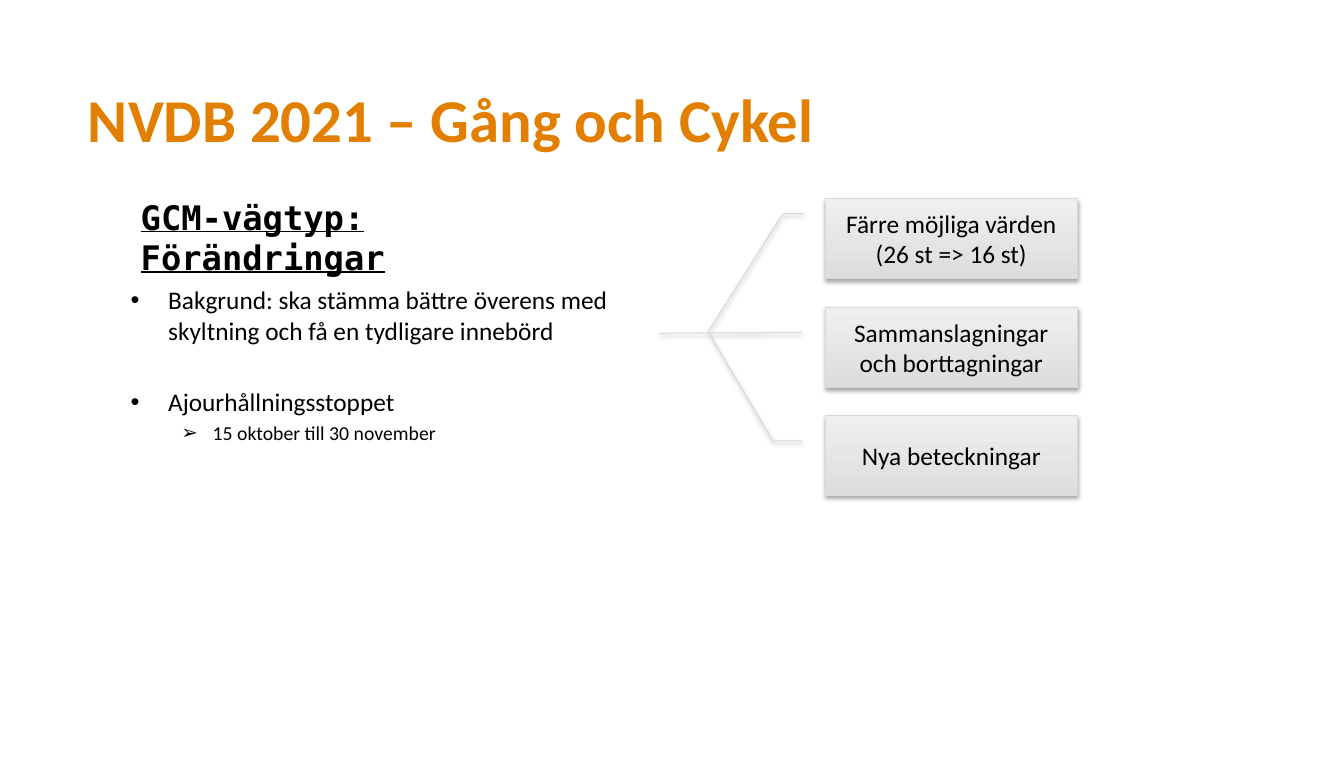
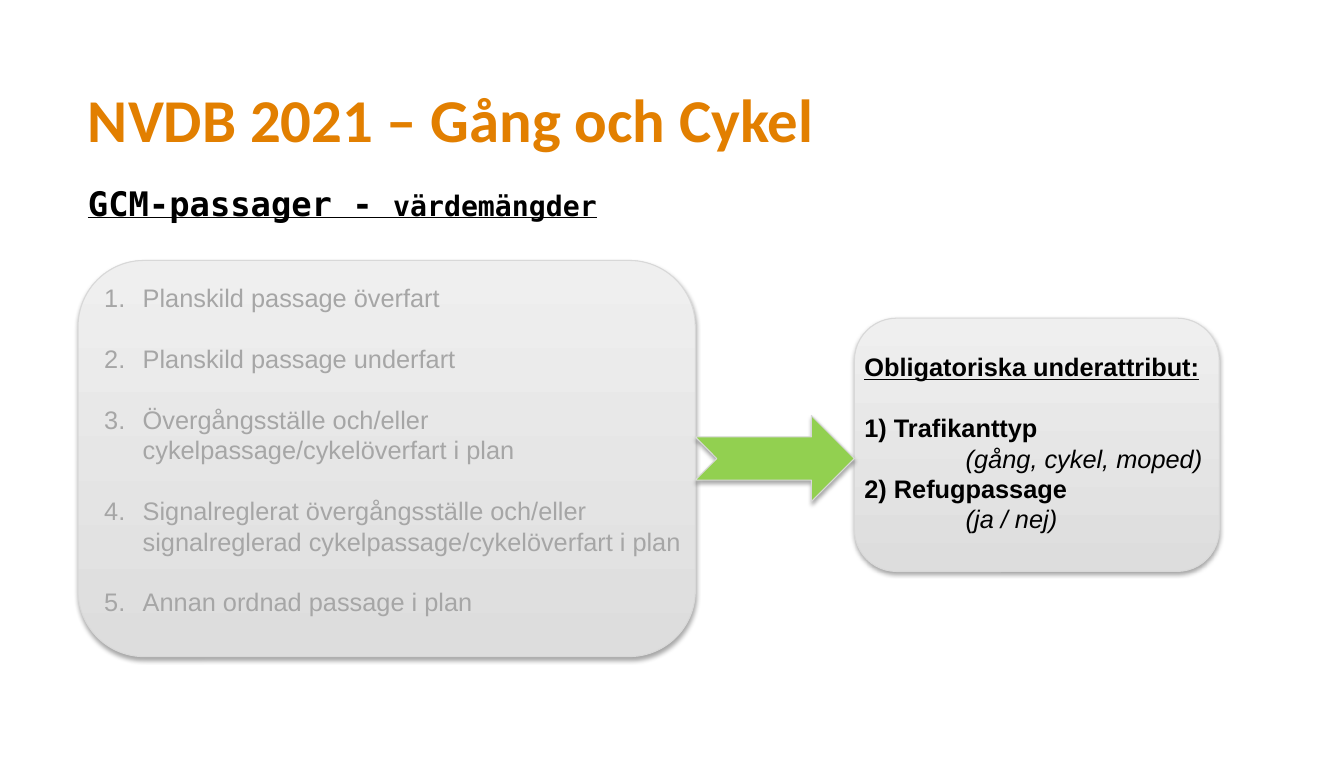
import pptx
import pptx.util
import pptx.dml.color
import pptx.enum.shapes
import pptx.enum.text
import pptx.oxml
import pptx.oxml.ns
from lxml import etree

PX = 9144  # 100 px to the inch
MSO_SHAPE = pptx.enum.shapes.MSO_SHAPE
ORANGE, BLACK, GREY = "E27F00", "000000", "A6A6A6"
EDGE, PALE, SHADE, GREEN = "D8D8D8", "EFEFEF", "DDDDDD", "92D050"
SANS, ARIAL, MONO = "Calibri", "Arial", "DejaVu Sans Mono"
ARIAL_LINE = 21.6  # line pitch in points for 18 pt Arial
MARGIN = 77


def emu(*lengths):
    return [length * PX for length in lengths]


def rgb(value):
    return pptx.dml.color.RGBColor.from_string(value)


def style_run(run, size, font, color, bold=False, italic=False, underline=False):
    run.font.size = pptx.util.Pt(size)
    run.font.name = font
    run.font.color.rgb = rgb(color)
    run.font.bold = bold
    run.font.italic = italic
    run.font.underline = underline


def set_indent(paragraph, left, hanging=0):
    properties = paragraph._p.get_or_add_pPr()
    properties.set("marL", str(left * PX))
    properties.set("indent", str(-hanging * PX))


def add_bullet(paragraph, tag, **attributes):
    properties = paragraph._p.get_or_add_pPr()
    font = etree.SubElement(properties, pptx.oxml.ns.qn("a:buFont"))
    font.set("typeface", ARIAL)
    bullet = etree.SubElement(properties, pptx.oxml.ns.qn(tag))
    for name, value in attributes.items():
        bullet.set(name, value)


def add_text_box(slide, left, top, width, height):
    frame = slide.shapes.add_textbox(*emu(left, top, width, height)).text_frame
    frame.word_wrap = True
    return frame


def add_paragraph(frame, text, space_before=0, line=None):
    """Fill the first paragraph, then add further ones."""
    first = not frame.text
    paragraph = frame.paragraphs[0] if first else frame.add_paragraph()
    paragraph.text = text
    if not first:
        paragraph.space_before = pptx.util.Pt(space_before)
    if line:
        paragraph.line_spacing = pptx.util.Pt(line)
    return paragraph


def add_title(slide):
    frame = add_text_box(slide, MARGIN, 76, 1064, 67)
    title = add_paragraph(frame, "NVDB 2021 – Gång och Cykel")
    style_run(title.runs[0], 43.2, SANS, ORANGE, bold=True)


def add_heading(slide, left, top, width, parts):
    heading = add_text_box(slide, left, top, width, 50).paragraphs[0]
    for text, size in parts:
        run = heading.add_run()
        run.text = text
        style_run(run, size, MONO, BLACK, bold=True, underline=True)


def add_panel(slide, kind, left, top, width, height, solid=None):
    """Preset shape with thin edge, soft shadow and grey gradient or solid fill."""
    panel = slide.shapes.add_shape(kind, *emu(left, top, width, height))
    if solid:
        panel.fill.solid()
        panel.fill.fore_color.rgb = rgb(solid)
    else:
        panel.fill.gradient()
        panel.fill.gradient_angle = 90
        for stop, color in zip(panel.fill.gradient_stops, (SHADE, PALE)):
            stop.color.rgb = rgb(color)
    panel.line.color.rgb = rgb(EDGE)
    panel.line.width = pptx.util.Pt(0.75)
    panel.shadow.inherit = False
    effects = panel._element.spPr.find(pptx.oxml.ns.qn("a:effectLst"))
    effects.append(pptx.oxml.parse_xml(
        f'<a:outerShdw {pptx.oxml.ns.nsdecls("a")} blurRad="40000" dist="23000" '
        f'dir="5400000" rotWithShape="0"><a:srgbClr val="{BLACK}">'
        '<a:alpha val="35000"/></a:srgbClr></a:outerShdw>'))
    return panel


def add_callout(slide, top, text, leader):
    callout = add_panel(slide, MSO_SHAPE.LINE_CALLOUT_2, 814, top, 249, 79)
    for index, value in enumerate(leader):
        callout.adjustments[index] = value
    frame = callout.text_frame
    frame.word_wrap = True
    frame.vertical_anchor = pptx.enum.text.MSO_ANCHOR.MIDDLE
    label = add_paragraph(frame, text)
    label.alignment = pptx.enum.text.PP_ALIGN.CENTER
    style_run(label.runs[0], 18, SANS, BLACK)


def build_road_types(slide):
    add_title(slide)
    add_heading(slide, 129, 189, 496, [("GCM-vägtyp: Förändringar", 24)])

    # Background and freeze period
    points = add_text_box(slide, 119, 276, 549, 258)
    for text, level, size, mark, left, hanging, gap in (
        ("Bakgrund: ska stämma bättre överens med skyltning och få en tydligare innebörd",
         0, 18, "•", 37, 37, 0),
        ("Ajourhållningsstoppet", 0, 18, "•", 37, 37, 29),
        ("15 oktober till 30 november", 1, 14, "➢", 81, 31, 2.8),
    ):
        point = add_paragraph(points, text, gap)
        point.level = level
        set_indent(point, left, hanging)
        add_bullet(point, "a:buChar", char=mark)
        style_run(point.runs[0], size, SANS, BLACK)

    # Changes, with leader lines meeting at one point
    changes = (
        ("Färre möjliga värden (26 st => 16 st)", (0.188, -0.083, 0.188, -0.167, 1.661, -0.463)),
        ("Sammanslagningar och borttagningar", (0.318, -0.091, 0.318, -0.207, 0.328, -0.658)),
        ("Nya beteckningar", (0.318, -0.091, 0.318, -0.207, -1.005, -0.456)),
    )
    for row, (text, leader) in enumerate(changes):
        add_callout(slide, 196 + 107 * row, text, leader)


def build_passages(slide):
    add_title(slide)
    add_heading(slide, MARGIN, 175, 913, [("GCM-passager - ", 24), ("värdemängder", 20)])
    add_panel(slide, MSO_SHAPE.ROUNDED_RECTANGLE, 843, 314, 360, 250)
    add_panel(slide, MSO_SHAPE.ROUNDED_RECTANGLE, MARGIN, 257, 609, 391)
    add_panel(slide, MSO_SHAPE.NOTCHED_RIGHT_ARROW, 686, 410, 157, 85, GREEN)

    # Passage values
    passages = add_text_box(slide, 93, 274, 636, 374)
    for text in (
        "Planskild passage överfart",
        "Planskild passage underfart",
        "Övergångsställe och/eller cykelpassage/cykelöverfart i plan",
        "Signalreglerat övergångsställe och/eller signalreglerad cykelpassage/cykelöverfart i plan",
        "Annan ordnad passage i plan",
    ):
        passage = add_paragraph(passages, text, ARIAL_LINE, ARIAL_LINE)
        set_indent(passage, 38, 38)
        add_bullet(passage, "a:buAutoNum", type="arabicPeriod")
        style_run(passage.runs[0], 18, ARIAL, GREY)

    # Mandatory sub-attributes
    attributes = add_text_box(slide, 843, 342, 360, 222)
    for text, gap, left, emphasis in (
        ("Obligatoriska underattribut:", 0, 0, {"bold": True, "underline": True}),
        ("1) Trafikanttyp", ARIAL_LINE, 0, {"bold": True}),
        ("(gång, cykel, moped)", 0, 100, {"italic": True}),
        ("2) Refugpassage", 0, 0, {"bold": True}),
        ("(ja / nej)", 0, 100, {"italic": True}),
    ):
        attribute = add_paragraph(attributes, text, gap, ARIAL_LINE)
        set_indent(attribute, left)
        style_run(attribute.runs[0], 18, ARIAL, BLACK, **emphasis)


def main():
    deck = pptx.Presentation()
    deck.slide_width, deck.slide_height = emu(1326, 750)
    for build in (build_road_types, build_passages):
        build(deck.slides.add_slide(deck.slide_layouts[6]))
    deck.save("out.pptx")


if __name__ == "__main__":
    main()
